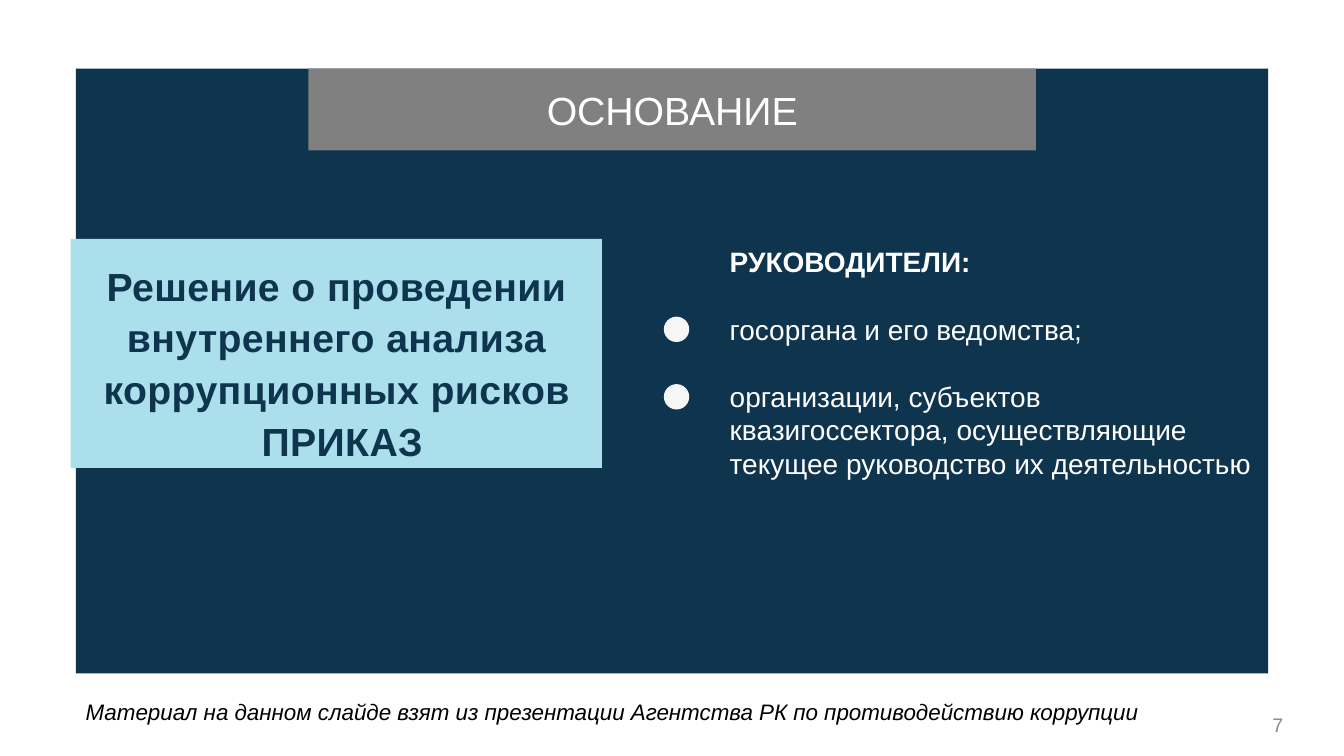
from pptx import Presentation
from pptx.dml.color import RGBColor
from pptx.enum.shapes import MSO_SHAPE
from pptx.enum.text import MSO_ANCHOR, PP_ALIGN
from pptx.util import Cm, Pt

RECTANGLE, OVAL = MSO_SHAPE.RECTANGLE, MSO_SHAPE.OVAL
LEFT, CENTER, RIGHT = PP_ALIGN.LEFT, PP_ALIGN.CENTER, PP_ALIGN.RIGHT
TOP, MIDDLE = MSO_ANCHOR.TOP, MSO_ANCHOR.MIDDLE

NAVY = RGBColor(0x0E, 0x34, 0x4E)
SKY = RGBColor(0xAB, 0xDF, 0xEB)
GRAY = RGBColor(0x80, 0x80, 0x80)
PALE = RGBColor(0xF6, 0xF6, 0xF6)
WHITE = RGBColor(0xFF, 0xFF, 0xFF)
BLACK = RGBColor(0x00, 0x00, 0x00)
NUMBER_GRAY = RGBColor(0x8C, 0x8C, 0x8C)

FONT = "Arial"


def add_filled_shape(slide, kind, left, top, width, height, color):
    shape = slide.shapes.add_shape(kind, Cm(left), Cm(top), Cm(width), Cm(height))
    shape.shadow.inherit = False
    shape.fill.solid()
    shape.fill.fore_color.rgb = color
    shape.line.fill.background()
    return shape


def add_text_box(slide, left, top, width, height, anchor=TOP, margins=True):
    frame = slide.shapes.add_textbox(
        Cm(left), Cm(top), Cm(width), Cm(height)).text_frame
    frame.word_wrap = True
    frame.vertical_anchor = anchor
    if not margins:
        frame.margin_left = frame.margin_right = Cm(0)
        frame.margin_top = frame.margin_bottom = Cm(0)
    return frame


def write_paragraph(paragraph, text, size, color, align=LEFT, bold=False,
                    italic=False, line_spacing=None):
    paragraph.alignment = align
    if line_spacing:
        paragraph.line_spacing = Pt(line_spacing)
    run = paragraph.add_run()
    run.text = text
    run.font.name = FONT
    run.font.size = Pt(size)
    run.font.bold = bold
    run.font.italic = italic
    run.font.color.rgb = color
    return run


def write_decision(slide):
    frame = add_text_box(slide, 1.6, 6.48, 13.77, 5.28, margins=False)
    lines = ["Решение о проведении внутреннего анализа коррупционных рисков",
             " ПРИКАЗ"]
    for index, text in enumerate(lines):
        paragraph = frame.add_paragraph() if index else frame.paragraphs[0]
        run = write_paragraph(paragraph, text, 28, NAVY, CENTER, bold=True,
                              line_spacing=37)
        # Letter spacing in hundredths of a point
        run._r.get_or_add_rPr().set("spc", "30")


def write_leaders(slide):
    frame = add_text_box(slide, 18.39, 6.17, 13.18, 7.01, margins=False)
    lines = ["РУКОВОДИТЕЛИ:",
             "госоргана и его ведомства;",
             "организации, субъектов квазигоссектора, осуществляющие "
             "текущее руководство их деятельностью"]
    for index, text in enumerate(lines):
        paragraph = frame.add_paragraph() if index else frame.paragraphs[0]
        if index:
            paragraph.space_before = Pt(24)
        write_paragraph(paragraph, text, 20, WHITE, bold=index == 0,
                        line_spacing=24)


def main():
    presentation = Presentation()
    presentation.slide_width, presentation.slide_height = Cm(33.87), Cm(19.05)
    slide = presentation.slides.add_slide(presentation.slide_layouts[6])

    # Background panel and decision card
    add_filled_shape(slide, RECTANGLE, 1.91, 1.73, 30.05, 15.24, NAVY)
    add_filled_shape(slide, RECTANGLE, 1.78, 6.02, 13.39, 5.77, SKY)
    write_decision(slide)

    # List of leaders with round markers
    for marker_top in (7.98, 9.68):
        add_filled_shape(slide, OVAL, 16.73, marker_top, 0.64, 0.64, PALE)
    write_leaders(slide)

    # Heading
    heading = add_filled_shape(slide, RECTANGLE, 7.77, 1.73, 18.34, 2.06, GRAY)
    heading.text_frame.vertical_anchor = MIDDLE
    write_paragraph(heading.text_frame.paragraphs[0], "ОСНОВАНИЕ", 28, WHITE, CENTER)

    # Source note and slide number
    note = add_text_box(slide, 1.91, 17.48, 29.08, 0.94)
    write_paragraph(note.paragraphs[0],
                    "Материал на данном слайде взят из презентации Агентства РК "
                    "по противодействию коррупции", 16, BLACK, italic=True)
    number = add_text_box(slide, 24.97, 17.75, 7.62, 1.02, MIDDLE)
    write_paragraph(number.paragraphs[0], "7", 14, NUMBER_GRAY, RIGHT)

    presentation.save("out.pptx")


if __name__ == "__main__":
    main()
